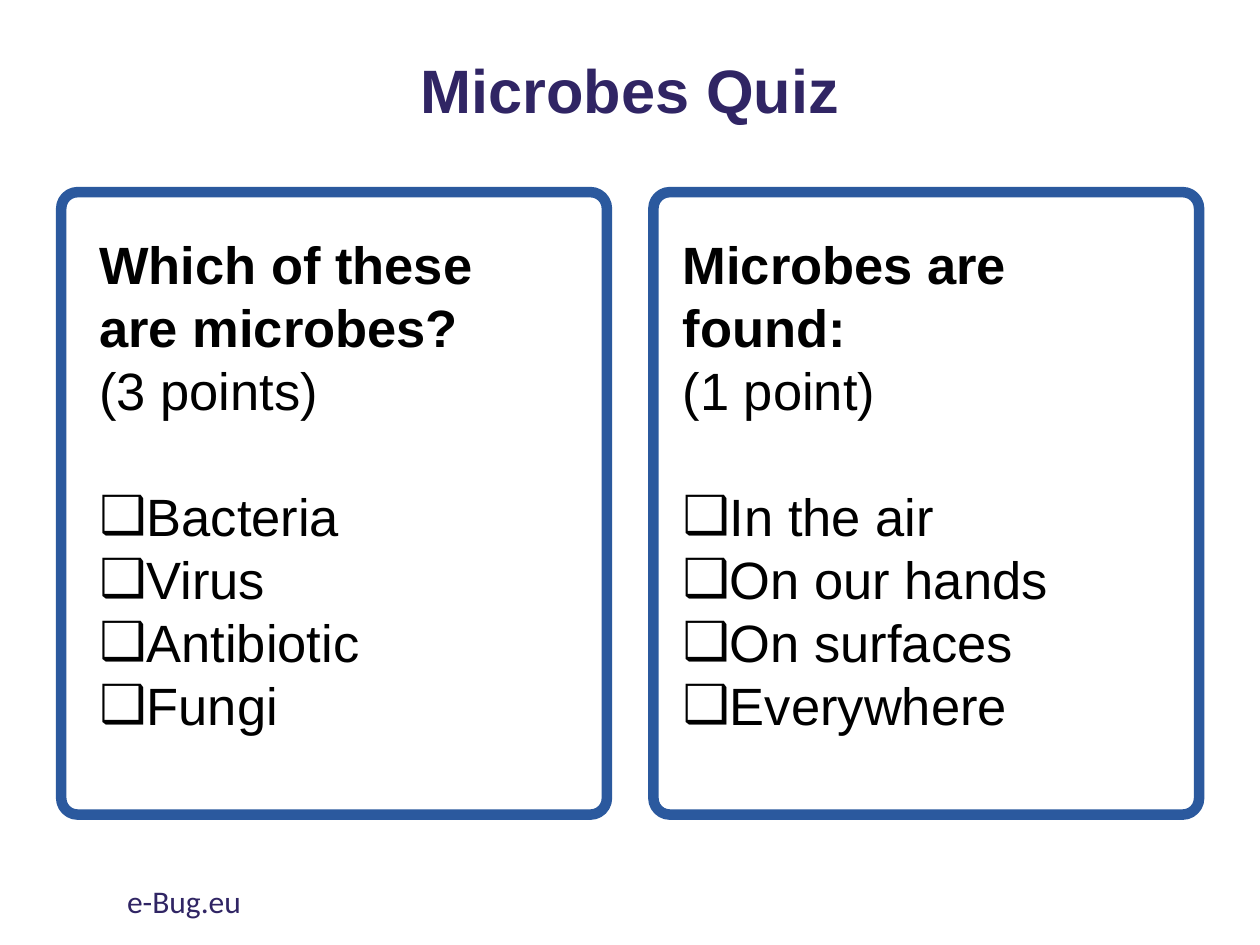
from lxml import etree
from pptx import Presentation
from pptx.dml.color import RGBColor
from pptx.enum.shapes import MSO_SHAPE
from pptx.enum.text import MSO_ANCHOR, PP_ALIGN
from pptx.oxml.ns import qn
from pptx.util import Pt

ROUNDED = MSO_SHAPE.ROUNDED_RECTANGLE
MIDDLE, TOP = MSO_ANCHOR.MIDDLE, MSO_ANCHOR.TOP
CENTER = PP_ALIGN.CENTER
PURPLE = RGBColor(0x30, 0x25, 0x64)
BLUE = RGBColor(0x2B, 0x59, 0x9E)
BLACK = RGBColor(0, 0, 0)

TITLE = "Microbes Quiz"
FOOTER = "e-Bug.eu"
QUESTIONS = [
    {"question": "Which of these are microbes?", "points": "(3 points)",
     "answers": ["Bacteria", "Virus", "Antibiotic", "Fungi"],
     "text_left": 49.7, "text_width": 273},
    {"question": "Microbes are found:", "points": "(1 point)",
     "answers": ["In the air", "On our hands", "On surfaces", "Everywhere"],
     "text_left": 383, "text_width": 287},
]
CARD_LEFT, CARD_TOP, CARD_WIDTH, CARD_HEIGHT = 35, 109.8, 311.8, 355.7
CARD_STEP = 338.4
TEXT_TOP, TEXT_HEIGHT = 129, 331
LINE_HEIGHT, INDENT = 36, 27


def add_span(para, text, size, color, bold=False, font="Arial"):
    span = para.add_run()
    span.text = text
    span.font.name = font
    span.font.size = Pt(size)
    span.font.bold = bold
    span.font.color.rgb = color


def add_box(slide, left, top, width, height):
    box = slide.shapes.add_textbox(Pt(left), Pt(top), Pt(width), Pt(height))
    box.text_frame.word_wrap = True
    box.text_frame.vertical_anchor = TOP
    return box.text_frame


def add_checkbox(para):
    properties = para._p.get_or_add_pPr()
    properties.set("marL", str(Pt(INDENT)))
    properties.set("indent", str(-Pt(INDENT)))
    etree.SubElement(properties, qn("a:buFont")).set("typeface", "Arial")
    etree.SubElement(properties, qn("a:buChar")).set("char", "❑")


def add_card(slide, index, item):
    card = slide.shapes.add_shape(
        ROUNDED, Pt(CARD_LEFT + index * CARD_STEP), Pt(CARD_TOP),
        Pt(CARD_WIDTH), Pt(CARD_HEIGHT))
    card.adjustments[0] = 0.03
    card.shadow.inherit = False
    card.fill.background()
    card.line.color.rgb = BLUE
    card.line.width = Pt(6)

    frame = add_box(slide, item["text_left"], TEXT_TOP, item["text_width"], TEXT_HEIGHT)
    lines = [item["question"], item["points"], *item["answers"]]
    for row, text in enumerate(lines):
        para = frame.add_paragraph() if row else frame.paragraphs[0]
        para.line_spacing = Pt(LINE_HEIGHT)
        if row == 2:
            para.space_before = Pt(LINE_HEIGHT)
        if row >= 2:
            add_checkbox(para)
        add_span(para, text, 30, BLACK, bold=row == 0)


def main():
    deck = Presentation()
    deck.slide_width, deck.slide_height = Pt(720), Pt(540)
    slide = deck.slides.add_slide(deck.slide_layouts[5])

    title = slide.shapes.title
    title.left, title.top, title.width, title.height = Pt(49.7), Pt(21), Pt(620.6), Pt(65.5)
    title.text_frame.vertical_anchor = MIDDLE
    para = title.text_frame.paragraphs[0]
    para.alignment = CENTER
    para.line_spacing = 0.9
    add_span(para, TITLE, 35, PURPLE, bold=True)

    for index, item in enumerate(QUESTIONS):
        add_card(slide, index, item)

    footer = add_box(slide, 65.5, 500.4, 243.4, 28.8)
    add_span(footer.paragraphs[0], FOOTER, 18, PURPLE, font="Calibri")
    deck.save("out.pptx")


if __name__ == "__main__":
    main()
